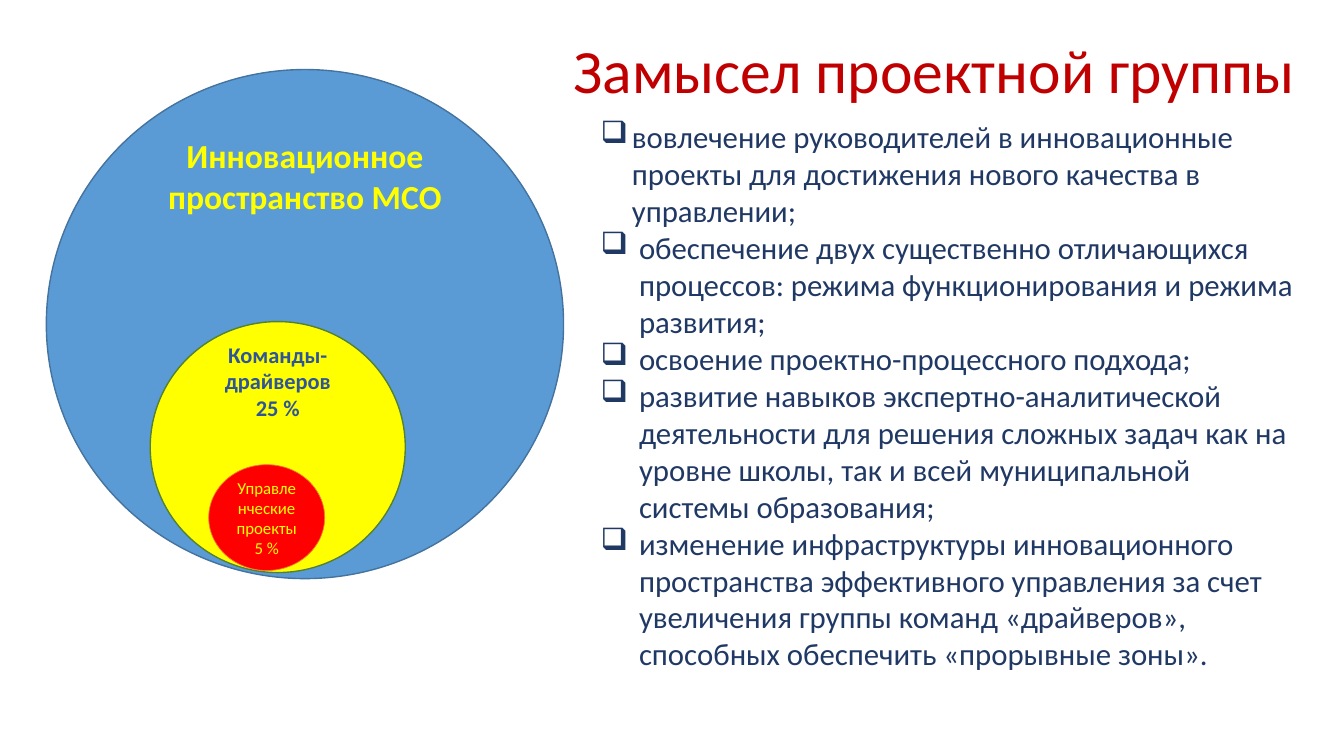
from dataclasses import dataclass

from lxml import etree
from pptx import Presentation
from pptx.dml.color import RGBColor
from pptx.enum.shapes import MSO_SHAPE
from pptx.enum.text import MSO_ANCHOR, PP_ALIGN
from pptx.oxml.ns import qn
from pptx.util import Pt

ELLIPSE = MSO_SHAPE.OVAL
MIDDLE = MSO_ANCHOR.MIDDLE
CENTER = PP_ALIGN.CENTER
PX = 9144


@dataclass(frozen=True)
class Theme:
    """Colours, type sizes and font of the slide."""
    font: str = "Calibri"
    title: str = "C00000"
    goals: str = "203864"
    blue: str = "5B9BD5"
    blue_edge: str = "43739E"
    yellow: str = "FFFF00"
    yellow_edge: str = "538035"
    red: str = "FF0000"
    red_edge: str = "ED7D31"
    teams: str = "2F5599"
    title_size: int = 44
    goals_size: int = 22
    space_size: int = 24
    teams_size: int = 16
    projects_size: int = 12


THEME = Theme()
TITLE = "Замысел проектной группы"
GOALS = [
    "вовлечение руководителей в инновационные проекты для достижения нового качества в управлении;",
    "обеспечение двух существенно отличающихся процессов: режима функционирования и режима развития;",
    "освоение проектно-процессного подхода;",
    "развитие навыков экспертно-аналитической деятельности для решения сложных задач "
    "как на уровне школы, так и всей муниципальной системы образования;",
    "изменение инфраструктуры инновационного пространства эффективного управления за счет "
    "увеличения группы команд «драйверов», способных обеспечить «прорывные зоны».",
]
FIRST_INDENT, INDENT = 31, 38


def px(*lengths):
    """Turn px lengths into EMU."""
    return [length * PX for length in lengths]


def style(paragraph, size, color, bold=False):
    """Format every run of a paragraph."""
    for run in paragraph.runs:
        run.font.name = THEME.font
        run.font.size = Pt(size)
        run.font.bold = bold
        run.font.color.rgb = RGBColor.from_string(color)


def add_bullet(paragraph, indent):
    """Give a paragraph a box bullet with a hanging indent."""
    properties = paragraph._p.get_or_add_pPr()
    properties.set("marL", str(indent * PX))
    properties.set("indent", str(-indent * PX))
    etree.SubElement(properties, qn("a:buChar")).set("char", "❑")


def add_circle(slide, box, fill, edge, edge_width, lines, size, color, bold, margins):
    """Draw one circle with its centred label between the given top and bottom margins."""
    circle = slide.shapes.add_shape(ELLIPSE, *px(*box))
    circle.shadow.inherit = False
    circle.fill.solid()
    circle.fill.fore_color.rgb = RGBColor.from_string(fill)
    circle.line.color.rgb = RGBColor.from_string(edge)
    circle.line.width = Pt(edge_width)
    frame = circle.text_frame
    frame.word_wrap = True
    frame.vertical_anchor = MIDDLE
    frame.margin_top, frame.margin_bottom = px(*margins)
    frame.text = "\n".join(lines)
    for paragraph in frame.paragraphs:
        paragraph.alignment = CENTER
        style(paragraph, size, color, bold)


def add_nested_circles(slide, box):
    """Draw the innovation space with the teams and projects inside it."""
    left, top, width, height = box
    add_circle(slide, box, THEME.blue, THEME.blue_edge, 1,
               ["Инновационное пространство МСО"],
               THEME.space_size, THEME.yellow, True, (0, 295))
    add_circle(slide, (left + 103, top + 250, 253, 249), THEME.yellow, THEME.yellow_edge, 1,
               ["Команды-драйверов", "25 %"],
               THEME.teams_size, THEME.teams, True, (0, 131))
    add_circle(slide, (left + 161, top + 392, 115, 105), THEME.red, THEME.red_edge, 0.5,
               ["Управленческие проекты", "5 %"],
               THEME.projects_size, THEME.yellow, False, (5, 5))


def add_title(slide, box):
    """Place the slide title on one line."""
    frame = slide.shapes.add_textbox(*px(*box)).text_frame
    frame.word_wrap = False
    frame.text = TITLE
    style(frame.paragraphs[0], THEME.title_size, THEME.title)


def add_goals(slide, box):
    """Place the bulleted list of goals."""
    frame = slide.shapes.add_textbox(*px(*box)).text_frame
    frame.word_wrap = True
    frame.text = "\n".join(GOALS)
    for number, paragraph in enumerate(frame.paragraphs):
        add_bullet(paragraph, INDENT if number else FIRST_INDENT)
        style(paragraph, THEME.goals_size, THEME.goals)


def main():
    """Build and save the presentation."""
    presentation = Presentation()
    presentation.slide_width, presentation.slide_height = px(1333, 750)
    slide = presentation.slides.add_slide(presentation.slide_layouts[6])
    add_nested_circles(slide, (46, 69, 513, 505))
    add_title(slide, (559, 27, 743, 84))
    add_goals(slide, (586, 112, 716, 565))
    presentation.save("out.pptx")


if __name__ == "__main__":
    main()
